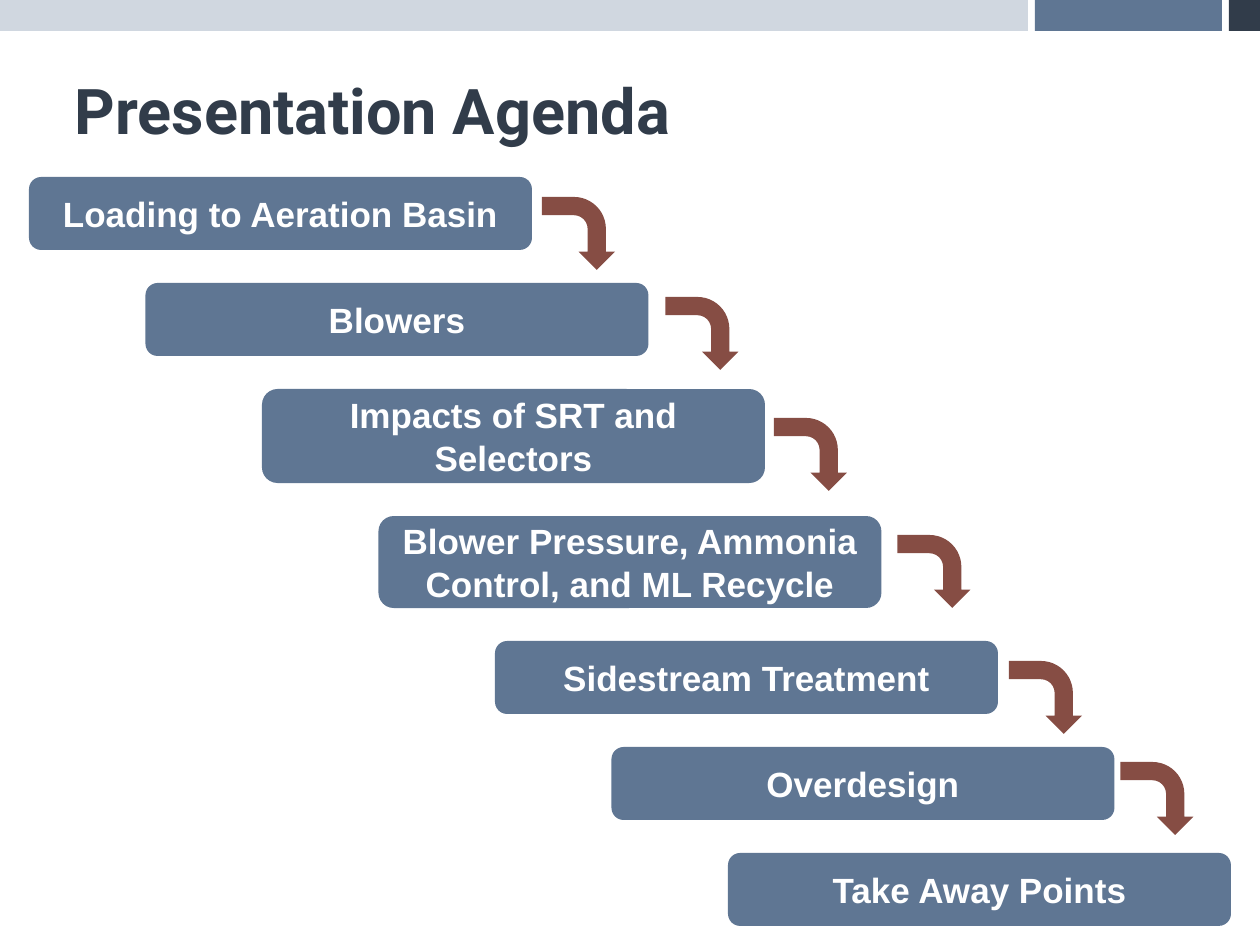
from pptx import Presentation
from pptx.dml.color import RGBColor
from pptx.enum.shapes import MSO_SHAPE as SHAPE
from pptx.enum.text import MSO_ANCHOR as ANCHOR, PP_ALIGN as ALIGN
from pptx.util import Emu, Pt

SLATE, NAVY, PALE, RUST, WHITE = "5F7693", "313C4A", "D0D7E0", "864D44", "FFFFFF"
BOX_W, GAP, ARROW = 503, 33, 73

# label, box height, arrow offset from the box's top right corner
STEPS = [
    ("Loading to Aeration Basin", 73, (10, 20)),
    ("Blowers", 73, (17, 14)),
    ("Impacts of SRT and Selectors", 94, (9, 29)),
    ("Blower Pressure, Ammonia Control, and ML Recycle", 92, (16, 19)),
    ("Sidestream Treatment", 73, (11, 20)),
    ("Overdesign", 73, (6, 15)),
    ("Take Away Points", 73, None),
]


def px(n):
    """Turn pixels into EMU."""
    return Emu(round(n * 914400 / 126))


def rgb(value):
    """Turn a hex string into a colour."""
    return RGBColor.from_string(value)


def add_block(s, kind, x, y, w, h, color):
    """Add a flat shape without line or shadow."""
    sp = s.shapes.add_shape(kind, px(x), px(y), px(w), px(h))
    sp.shadow.inherit = False
    sp.fill.solid()
    sp.fill.fore_color.rgb = rgb(color)
    sp.line.fill.background()
    return sp


def set_text(sp, text, align, font, size, color):
    """Write one bold, vertically centred paragraph."""
    tf = sp.text_frame
    tf.text = text
    tf.word_wrap = True
    tf.vertical_anchor = ANCHOR.MIDDLE
    p = tf.paragraphs[0]
    p.alignment = align
    p.font.name, p.font.size, p.font.bold = font, Pt(size), True
    p.font.color.rgb = rgb(color)


def add_header_bar(s, x, y, w, h):
    """Draw the three-part bar, its parts divided by narrow gaps."""
    for left, right, color in ((0, 1028, PALE), (1035, 1222, SLATE), (1229, w, NAVY)):
        add_block(s, SHAPE.RECTANGLE, x + left, y, right - left, h, color)


def add_title(s, x, y, w, h):
    """Place and format the slide title."""
    sp = s.shapes.title
    sp.left, sp.top, sp.width, sp.height = px(x), px(y), px(w), px(h)
    set_text(sp, "Presentation Agenda", ALIGN.LEFT, "Roboto", 36, NAVY)


def add_staircase(s, x, y, w):
    """Draw the agenda steps descending to the right, joined by bent arrows."""
    shift = (w - BOX_W) / (len(STEPS) - 1)
    for i, (label, h, offset) in enumerate(STEPS):
        left = x + i * shift
        sp = add_block(s, SHAPE.ROUNDED_RECTANGLE, left, y, BOX_W, h, SLATE)
        set_text(sp, label, ALIGN.CENTER, "Arial", 20, WHITE)
        if offset:
            dx, dy = offset
            arrow = add_block(s, SHAPE.BENT_ARROW, left + BOX_W + dx, y + dy, ARROW, ARROW, RUST)
            arrow.rotation = 90
        y += h + GAP


def main():
    """Build the agenda slide."""
    prs = Presentation()
    prs.slide_width, prs.slide_height = px(1260), px(945)
    s = prs.slides.add_slide(prs.slide_layouts[5])
    add_header_bar(s, 0, 0, 1260, 31)
    add_title(s, 62, 60, 1131, 98)
    add_staircase(s, 29, 177, 1202)
    prs.save("out.pptx")


if __name__ == "__main__":
    main()
